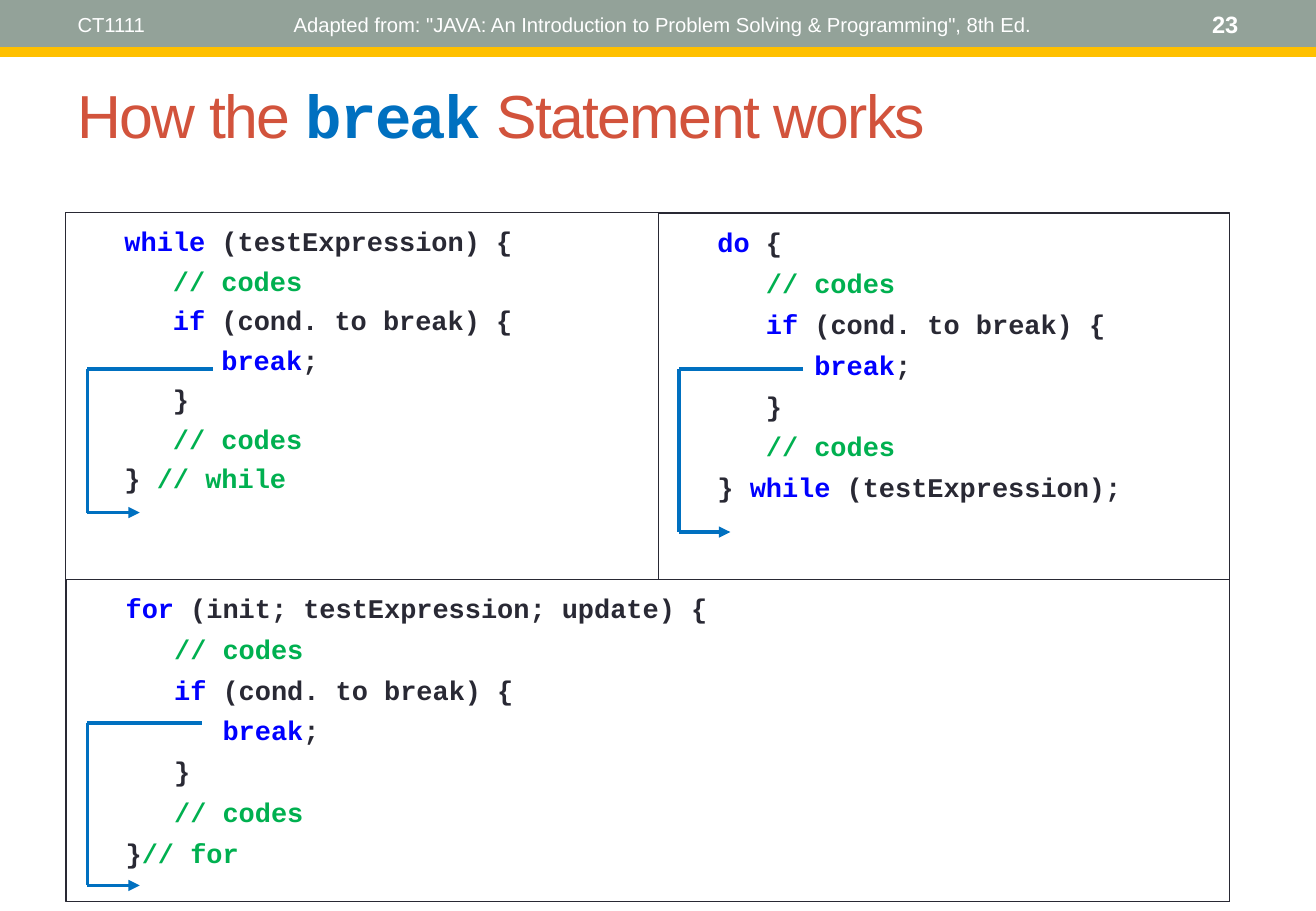
from pptx import Presentation
from pptx.dml.color import RGBColor
from pptx.enum.shapes import MSO_CONNECTOR as CONN, MSO_SHAPE as SHAPE
from pptx.enum.text import MSO_ANCHOR as ANCHOR, PP_ALIGN as ALIGN
from pptx.oxml.ns import qn
from pptx.util import Inches, Pt
from lxml.etree import SubElement

WHITE = RGBColor(0xFF, 0xFF, 0xFF)
SAGE = RGBColor(0x93, 0xA2, 0x99)
GOLD = RGBColor(0xFF, 0xC0, 0x00)
RUST = RGBColor(0xD2, 0x53, 0x3C)
BLUE = RGBColor(0x00, 0x70, 0xC0)
INK = RGBColor(0x29, 0x29, 0x34)
KEYWORD = RGBColor(0x00, 0x00, 0xFF)
COMMENT = RGBColor(0x00, 0xB0, 0x50)

LOOP_BODY = [
    [("     // codes", COMMENT)],
    [("     if", KEYWORD), (" (cond. to break) {", INK)],
    [("        break", KEYWORD), (";", INK)],
    [("     }", INK)],
    [("     // codes", COMMENT)],
]
LOOPS = [
    ((0.54, 1.75, 9.58, 5.67), 4.25,
     [("  while", KEYWORD), (" (testExpression) {", INK)],
     [("  }", INK), (" // while", COMMENT)]),
    ((5.42, 1.76, 4.7, 3.01), 5,
     [("  do", KEYWORD), (" {", INK)],
     [("  } ", INK), ("while", KEYWORD), (" (testExpression);", INK)]),
    ((0.55, 4.77, 9.57, 2.65), 5,
     [("  for", KEYWORD), (" (init; testExpression; update) {", INK)],
     [("  }", INK), ("// for", COMMENT)]),
]
JUMPS = [
    (1.75, 0.72, 3.04, 4.22, 1.15),
    (6.61, 5.59, 3.04, 4.38, 6.01),
    (1.66, 0.72, 5.95, 7.29, 1.15),
]


def add_run(p, text, size=12, font="Arial", color=WHITE, bold=False, spacing=0):
    """Append formatted text to a paragraph."""
    r = p.add_run()
    r.text = text
    r.font.size = Pt(size)
    r.font.name = font
    r.font.color.rgb = color
    r.font.bold = bold
    if spacing:
        r.font._element.set("spc", str(spacing * 100))


def add_box(s, box, align=ALIGN.LEFT):
    """Add a middle-anchored text box and return its paragraph."""
    tf = s.shapes.add_textbox(*map(Inches, box)).text_frame
    tf.word_wrap = True
    tf.vertical_anchor = ANCHOR.MIDDLE
    p = tf.paragraphs[0]
    p.alignment = align
    return p


def add_rect(s, box, fill=None, line=None):
    """Add a flat rectangle with an optional fill and outline."""
    sp = s.shapes.add_shape(SHAPE.RECTANGLE, *map(Inches, box))
    sp.shadow.inherit = False
    if fill is None:
        sp.fill.background()
    else:
        sp.fill.solid()
        sp.fill.fore_color.rgb = fill
    if line is None:
        sp.line.fill.background()
    else:
        sp.line.color.rgb = line
        sp.line.width = Pt(0.75)
    return sp


def add_line(shapes, x1, y1, x2, y2, color=BLUE, width=2.25, arrow=False):
    """Add a straight line, with an arrowhead at its end if asked."""
    line = shapes.add_connector(CONN.STRAIGHT, *map(Inches, (x1, y1, x2, y2)))
    line.line.color.rgb = color
    line.line.width = Pt(width)
    if arrow:
        SubElement(line.line._get_or_add_ln(), qn("a:tailEnd"), type="triangle")
    SubElement(line._element.spPr, qn("a:effectLst"))


def add_code(s, box, gap, lines):
    """Add an outlined panel of coloured code lines."""
    tf = add_rect(s, box, line=INK).text_frame
    tf.word_wrap = True
    tf.vertical_anchor = ANCHOR.TOP
    tf.margin_left = tf.margin_right = Inches(0.1)
    tf.margin_top = tf.margin_bottom = Inches(0.1)
    for i, parts in enumerate(lines):
        p = tf.add_paragraph() if i else tf.paragraphs[0]
        p.alignment = ALIGN.LEFT
        p.space_before = Pt(gap if i else 0)
        p._p.get_or_add_pPr().set("marL", str(Inches(0.12)))
        for text, color in parts:
            add_run(p, text, size=16, font="Courier New", color=color, bold=True)


def add_jump(s, start, left, top, bottom, end):
    """Add the grouped arrow that leads from break to after the loop."""
    shapes = s.shapes.add_group_shape().shapes
    add_line(shapes, start, top, left, top)
    add_line(shapes, left, top, left, bottom)
    add_line(shapes, left, bottom, end, bottom, arrow=True)


def add_header(s):
    """Add the header band with its three texts."""
    add_rect(s, (0, 0, 10.83, 0.4), fill=SAGE)
    add_line(s.shapes, 0, 0.43, 10.83, 0.43, color=GOLD, width=6)
    add_run(add_box(s, (0.54, 0.02, 3.43, 0.36)), "CT1111")
    add_run(add_box(s, (1.97, 0.02, 6.97, 0.36), ALIGN.CENTER),
            'Adapted from: "JAVA: An Introduction to Problem Solving & Programming", 8th Ed.')
    add_run(add_box(s, (9.03, 0.02, 1.26, 0.36), ALIGN.RIGHT), "23", size=14, bold=True)


def add_title(s):
    """Add the title with its code word."""
    p = add_box(s, (0.54, 0.4, 9.75, 1.08))
    add_run(p, "How the ", size=36, color=RUST, spacing=-1)
    add_run(p, "break", size=36, font="Courier New", color=BLUE, bold=True, spacing=-1)
    add_run(p, " Statement works", size=36, color=RUST, spacing=-1)


def main():
    """Build and save the slide."""
    prs = Presentation()
    prs.slide_width, prs.slide_height = Inches(10.83), Inches(7.5)
    s = prs.slides.add_slide(prs.slide_layouts[6])
    add_header(s)
    add_title(s)
    for box, gap, opening, closing in LOOPS:
        add_code(s, box, gap, [opening, *LOOP_BODY, closing])
    for jump in JUMPS:
        add_jump(s, *jump)
    prs.save("out.pptx")


if __name__ == "__main__":
    main()
